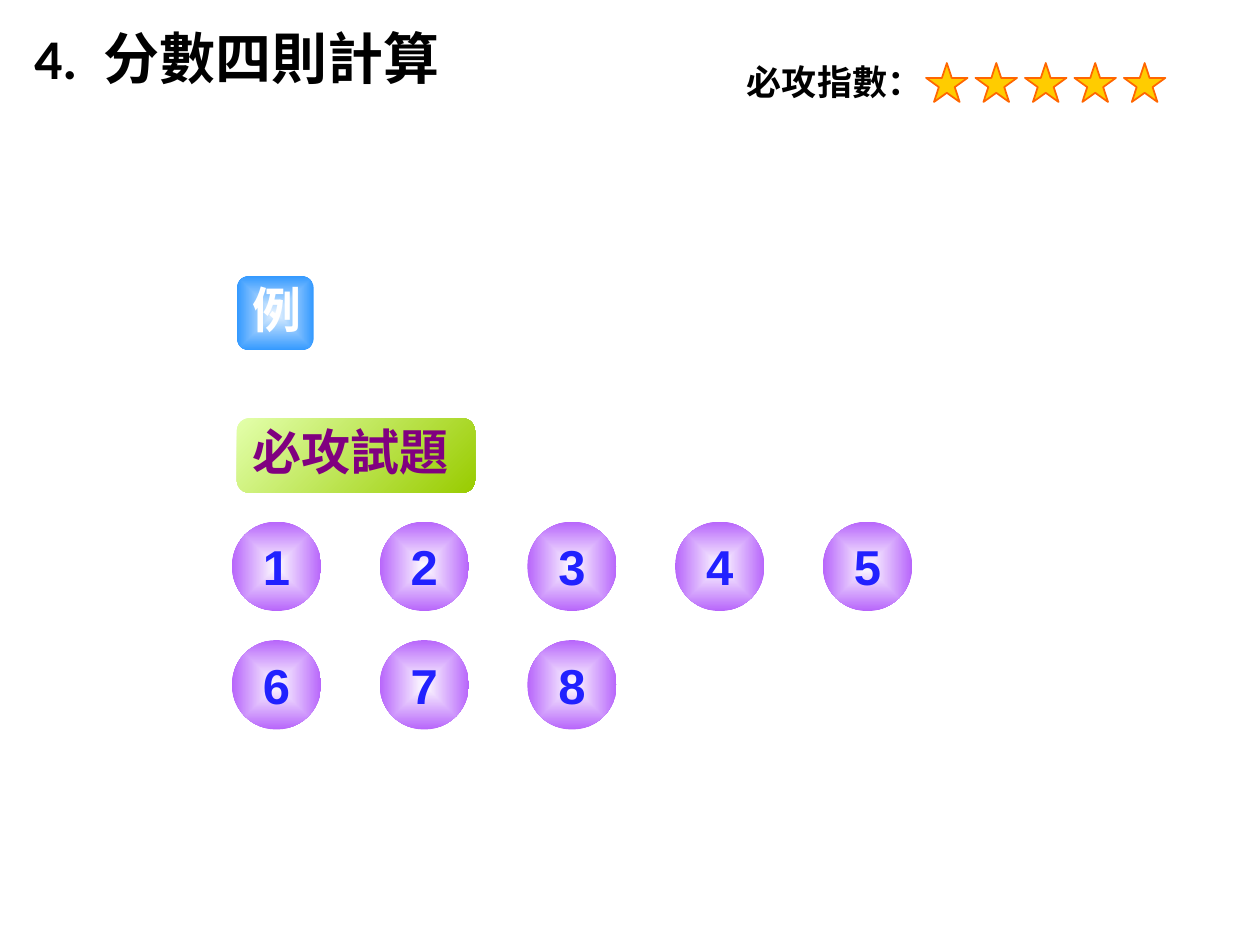
from lxml import etree
from pptx import Presentation
from pptx import util as u
from pptx.dml.color import RGBColor
from pptx.enum import shapes, text
from pptx.oxml import parse_xml
from pptx.oxml.ns import nsdecls, qn

# Content
NUMBER, TOPIC = "4.", "分數四則計算"
RATING_LABEL, STARS = "必攻指數：", 5
QUESTIONS = [["1", "2", "3", "4", "5"], ["6", "7", "8"]]
# Each badge: words, box, font colour, alignment, gradient stops, angle (None: from centre)
BADGES = [
    ("例", (1.88, 2.19, 0.61, 0.59), "FFFFFF", text.PP_ALIGN.CENTER, ("E5F2FF", "3399FF"), None),
    ("必攻試題", (1.88, 3.32, 1.89, 0.59), "800080", text.PP_ALIGN.LEFT, ("E3FFAB", "99CC00"), 45),
]

# Grids: first left, last left, most columns
STAR_SPAN, STAR_TOP, STAR_SIZE = (7.35, 8.92), 0.5, (0.33, 0.31)
BALL_SPAN, BALL_ROWS, BALL_SIZE = (1.84, 6.53), (4.14, 5.08), 0.71


def rgb(code):
    return RGBColor.from_string(code)


def column(span, index, count):
    return span[0] + index * (span[1] - span[0]) / (count - 1)


def style(font, size, face, color):
    font.size, font.name, font.bold = u.Pt(size), face, True
    font.color.rgb = rgb(color)
    east_asian = etree.SubElement(font._element, qn("a:ea"))
    east_asian.set("typeface", face)


def add_preset(kind, box):
    shape = slide.shapes.add_shape(kind, *map(u.Inches, box))
    shape.shadow.inherit = False
    return shape


def gradient(shape, stops, angle=None):
    inner, outer = stops
    if angle is None:
        course = ('<a:path path="shape"><a:fillToRect l="50000" t="50000" '
                  'r="50000" b="50000"/></a:path>')
    else:
        course = f'<a:lin ang="{angle * 60000}" scaled="1"/>'
    fill = parse_xml(
        f'<a:gradFill {nsdecls("a")} rotWithShape="1"><a:gsLst>'
        f'<a:gs pos="0"><a:srgbClr val="{inner}"/></a:gs>'
        f'<a:gs pos="100000"><a:srgbClr val="{outer}"/></a:gs>'
        f'</a:gsLst>{course}</a:gradFill>')
    shape._element.spPr.find(qn("a:prstGeom")).addnext(fill)
    shape.line.fill.background()


prs = Presentation()
prs.slide_width, prs.slide_height = u.Inches(10), u.Inches(7.5)
slide = prs.slides.add_slide(prs.slide_layouts[5])

# Title
title = slide.shapes.title
title.left, title.top, title.width, title.height = map(u.Inches, (0.17, 0.14, 6.56, 0.82))
title.text_frame.vertical_anchor = text.MSO_ANCHOR.TOP
heading = title.text_frame.paragraphs[0]
heading.alignment = text.PP_ALIGN.LEFT
for words, face in ((NUMBER, "Calibri"), (" ", "Calibri"), (TOPIC, "Noto Sans CJK TC")):
    run = heading.add_run()
    run.text = words
    style(run.font, 32, face, "000000")
    if words == " ":  # widen the gap after the number
        run.font._element.set("spc", "740")

# Rating label and stars
label = slide.shapes.add_textbox(*map(u.Inches, (5.83, 0.43, 1.89, 0.46)))
label.text_frame.word_wrap = True
label.text_frame.text = RATING_LABEL
style(label.text_frame.paragraphs[0].runs[0].font, 20, "Noto Sans CJK TC", "000000")
for i in range(STARS):
    star = add_preset(shapes.MSO_SHAPE.STAR_5_POINT,
                      (column(STAR_SPAN, i, STARS), STAR_TOP, *STAR_SIZE))
    star.fill.solid()
    star.fill.fore_color.rgb = rgb("FFCC00")
    star.line.color.rgb = rgb("FF6600")
    star.line.width = u.Pt(1)

# Section badges
for words, box, color, align, stops, angle in BADGES:
    badge = add_preset(shapes.MSO_SHAPE.ROUNDED_RECTANGLE, box)
    gradient(badge, stops, angle)
    frame = badge.text_frame
    frame.text, frame.vertical_anchor = words, text.MSO_ANCHOR.TOP
    line = frame.paragraphs[0]
    line.alignment, line.line_spacing = align, u.Pt(30)
    style(line.runs[0].font, 28, "Noto Sans CJK SC", color)

# Question balls
most = max(map(len, QUESTIONS))
for top, row in zip(BALL_ROWS, QUESTIONS):
    for i, number in enumerate(row):
        ball = add_preset(shapes.MSO_SHAPE.OVAL,
                          (column(BALL_SPAN, i, most), top, BALL_SIZE, BALL_SIZE))
        gradient(ball, ("FFFFFF", "B765FB"))
        frame = ball.text_frame
        frame.text, frame.word_wrap = number, False
        frame.vertical_anchor = text.MSO_ANCHOR.MIDDLE
        frame.paragraphs[0].alignment = text.PP_ALIGN.CENTER
        style(frame.paragraphs[0].runs[0].font, 28, "Arial", "2121FF")

prs.save("out.pptx")
